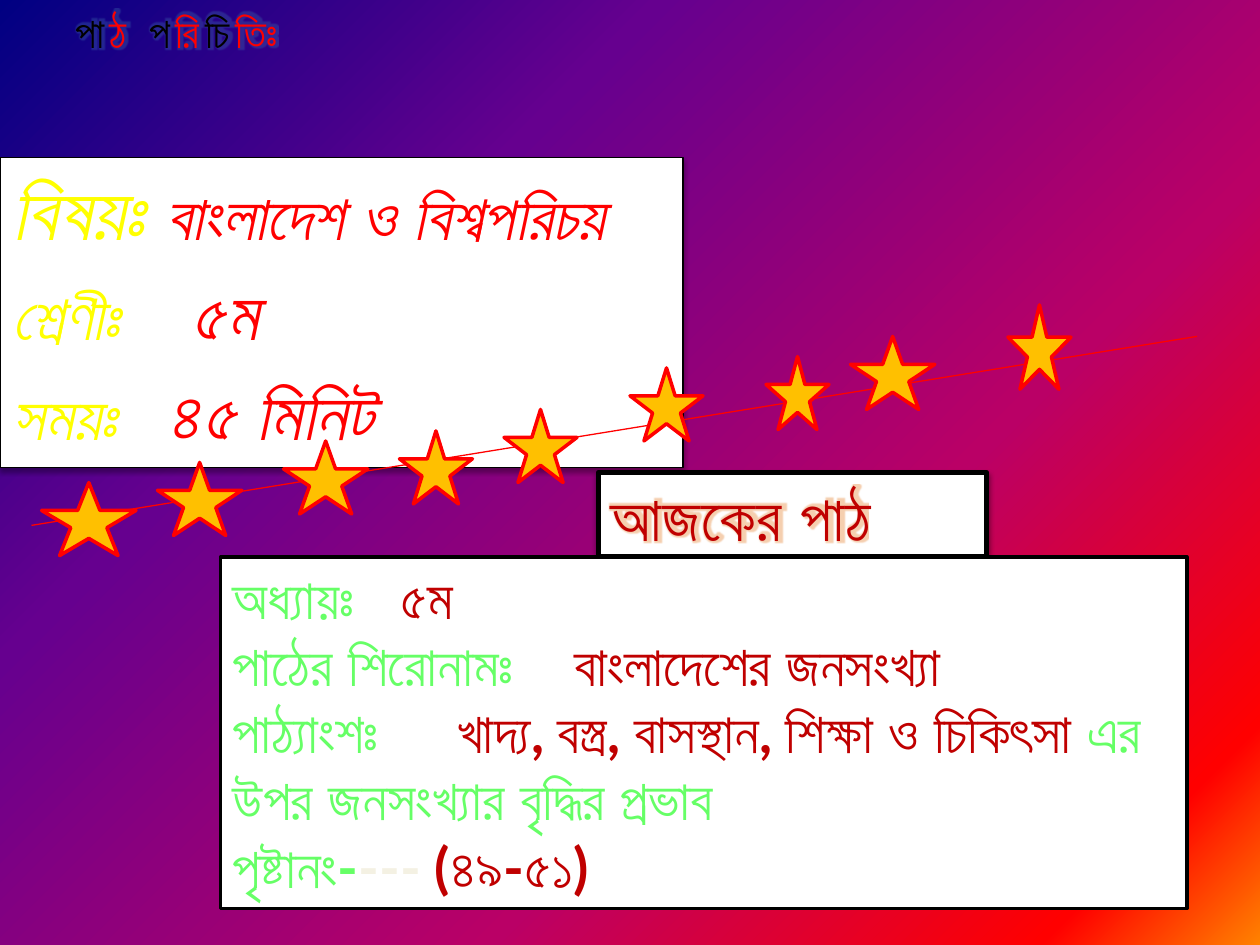
from lxml import etree
from pptx import Presentation
from pptx.dml.color import RGBColor
from pptx.enum.shapes import MSO_CONNECTOR as CONN, MSO_SHAPE as SHAPE
from pptx.enum.text import MSO_ANCHOR as ANCHOR, MSO_AUTO_SIZE as AUTO, PP_ALIGN as ALIGN
from pptx.oxml import parse_xml
from pptx.oxml.ns import nsdecls, qn
from pptx.util import Inches, Pt

COLORS = {
    "white": "FFFFFF", "black": "000000", "red": "FF0000", "yellow": "FFFF00",
    "gold": "FFC000", "green": "66FF66", "maroon": "C00000", "cream": "F4F1E3",
    "blue_glow": "3A5FA8", "orange_glow": "E78738",
}
BACKGROUND = [(0, "000082"), (30, "66008F"), (65, "BA0066"), (90, "FF0000"), (100, "FF8200")]


def rgb(name):
    return RGBColor.from_string(COLORS[name])


class SlideBuilder:
    font = "Lato"

    def __init__(self, slide):
        self.slide = slide

    def background(self, stops):
        fill = self.slide.background.fill
        fill.gradient()
        grad = self.slide.element.find(".//" + qn("a:gradFill"))
        marks = "".join(
            f'<a:gs pos="{pos * 1000}"><a:srgbClr val="{color}"/></a:gs>' for pos, color in stops
        )
        new = parse_xml(
            f'<a:gradFill {nsdecls("a")} rotWithShape="1"><a:gsLst>{marks}</a:gsLst>'
            '<a:path path="circle"><a:fillToRect r="100000" b="100000"/></a:path></a:gradFill>'
        )
        grad.getparent().replace(grad, new)

    def add_text(self, sp, lines, size, italic=False, spacing=0, glow=None):
        tf = sp.text_frame
        tf.word_wrap = True
        tf.vertical_anchor = ANCHOR.TOP
        for i, (tab, runs) in enumerate(lines):
            p = tf.paragraphs[0] if i == 0 else tf.add_paragraph()
            p.alignment = ALIGN.LEFT
            if tab:
                tabs = etree.SubElement(p._p.get_or_add_pPr(), qn("a:tabLst"))
                etree.SubElement(tabs, qn("a:tab"), pos=str(Inches(tab)), algn="l")
            p.font.name = self.font
            p.font.bold = True
            p.font.italic = italic
            p.font.size = Pt(size)
            for text, color, *own_size in runs:
                r = p.add_run()
                r.text = text
                r.font.color.rgb = rgb(color)
                if own_size:
                    r.font.size = Pt(own_size[0])
                if spacing:
                    r.font._element.set("spc", str(int(spacing * 100)))
                if glow:
                    r.font._element.append(parse_xml(
                        f'<a:effectLst {nsdecls("a")}><a:glow rad="{Pt(3)}">'
                        f'<a:srgbClr val="{COLORS[glow]}"><a:alpha val="40000"/></a:srgbClr>'
                        '</a:glow></a:effectLst>'
                    ))

    def title(self, x, y, w, h, runs, size, **style):
        sp = self.slide.shapes.title
        sp.left, sp.top, sp.width, sp.height = map(Inches, (x, y, w, h))
        self.add_text(sp, [(None, runs)], size, **style)
        sp.text_frame.auto_size = AUTO.NONE

    def shape(self, kind, x, y, w, h, fill, line, weight):
        sp = self.slide.shapes.add_shape(kind, *map(Inches, (x, y, w, h)))
        sp.shadow.inherit = False
        sp.fill.solid()
        sp.fill.fore_color.rgb = rgb(fill)
        sp.line.color.rgb = rgb(line)
        sp.line.width = Pt(weight)
        return sp

    def box(self, x, y, w, h, weight, lines, size, shadow=None, **style):
        sp = self.shape(SHAPE.RECTANGLE, x, y, w, h, "white", "black", weight)
        if shadow:
            alpha, distance = shadow
            sp._element.spPr.find(qn("a:effectLst")).append(parse_xml(
                f'<a:outerShdw {nsdecls("a")} blurRad="{Pt(3.1)}" dist="{Pt(distance)}" '
                f'dir="5400000" rotWithShape="0"><a:srgbClr val="{COLORS["black"]}">'
                f'<a:alpha val="{alpha * 1000}"/></a:srgbClr></a:outerShdw>'
            ))
        self.add_text(sp, lines, size, **style)
        sp.text_frame.auto_size = AUTO.SHAPE_TO_FIT_TEXT

    def line(self, x1, y1, x2, y2, color, weight):
        cx = self.slide.shapes.add_connector(CONN.STRAIGHT, *map(Inches, (x1, y1, x2, y2)))
        cx.line.color.rgb = rgb(color)
        cx.line.width = Pt(weight)
        etree.SubElement(cx._element.spPr, qn("a:effectLst"))

    def star(self, x, y, w, h=0.58):
        self.shape(SHAPE.STAR_5_POINT, x, y, w, h, "gold", "red", 2)


def main():
    prs = Presentation()
    prs.slide_width, prs.slide_height = Inches(10), Inches(7.5)
    s = SlideBuilder(prs.slides.add_slide(prs.slide_layouts[5]))
    s.background(BACKGROUND)

    s.title(0.5, 0, 6.58, 1.08, [
        ("পা", "black"), ("ঠ ", "red"), ("প", "black"),
        ("রি", "red"), ("চি", "black"), ("তিঃ", "red"),
    ], 24, spacing=3, glow="blue_glow")

    s.box(0, 1.25, 5.42, 2.46, 0.75, [
        (None, [("বিষয়ঃ ", "yellow", 44), ("বাংলাদেশ ও বিশ্বপরিচয়", "red")]),
        (1.42, [("শ্রেণীঃ", "yellow"), ("\t", "red", 48), ("৫ম", "red", 40)]),
        (1.23, [("সময়ঃ", "yellow"), ("\t", "red", 48), ("৪৫ মিনিট", "red", 40)]),
    ], 36, shadow=(35, 1.8), italic=True)

    s.box(4.75, 3.75, 3.08, 0.67, 3, [(None, [("আজকের পাঠ", "maroon")])],
          36, shadow=(38, 1.6), spacing=0.5, glow="orange_glow")

    s.box(1.75, 4.42, 7.67, 2.79, 2, [
        (1.33, [("অধ্যায়ঃ\t", "green"), ("৫ম", "maroon")]),
        (2.71, [("পাঠের শিরোনামঃ\t", "green"), ("বাংলাদেশের জনসংখ্যা", "maroon")]),
        (1.78, [("পাঠ্যাংশঃ\t", "green"),
                ("খাদ্য, বস্ত্র, বাসস্থান, শিক্ষা ও চিকিৎসা ", "maroon"),
                ("এর উপর জনসংখ্যার বৃদ্ধির প্রভাব", "green")]),
        (None, [("পৃষ্টানং-", "green"), ("--- ", "cream"), ("(৪৯-৫১)", "maroon")]),
    ], 32)

    s.line(0.25, 4.17, 9.5, 2.67, "red", 0.75)
    for star in [
        (0.33, 3.83, 0.75), (1.25, 3.67, 0.67), (2.25, 3.5, 0.67),
        (3.17, 3.42, 0.58), (4, 3.25, 0.58), (5, 2.92, 0.58),
        (6.08, 2.83, 0.5), (6.75, 2.67, 0.67), (8, 2.42, 0.5, 0.67),
    ]:
        s.star(*star)

    prs.save("out.pptx")


if __name__ == "__main__":
    main()
